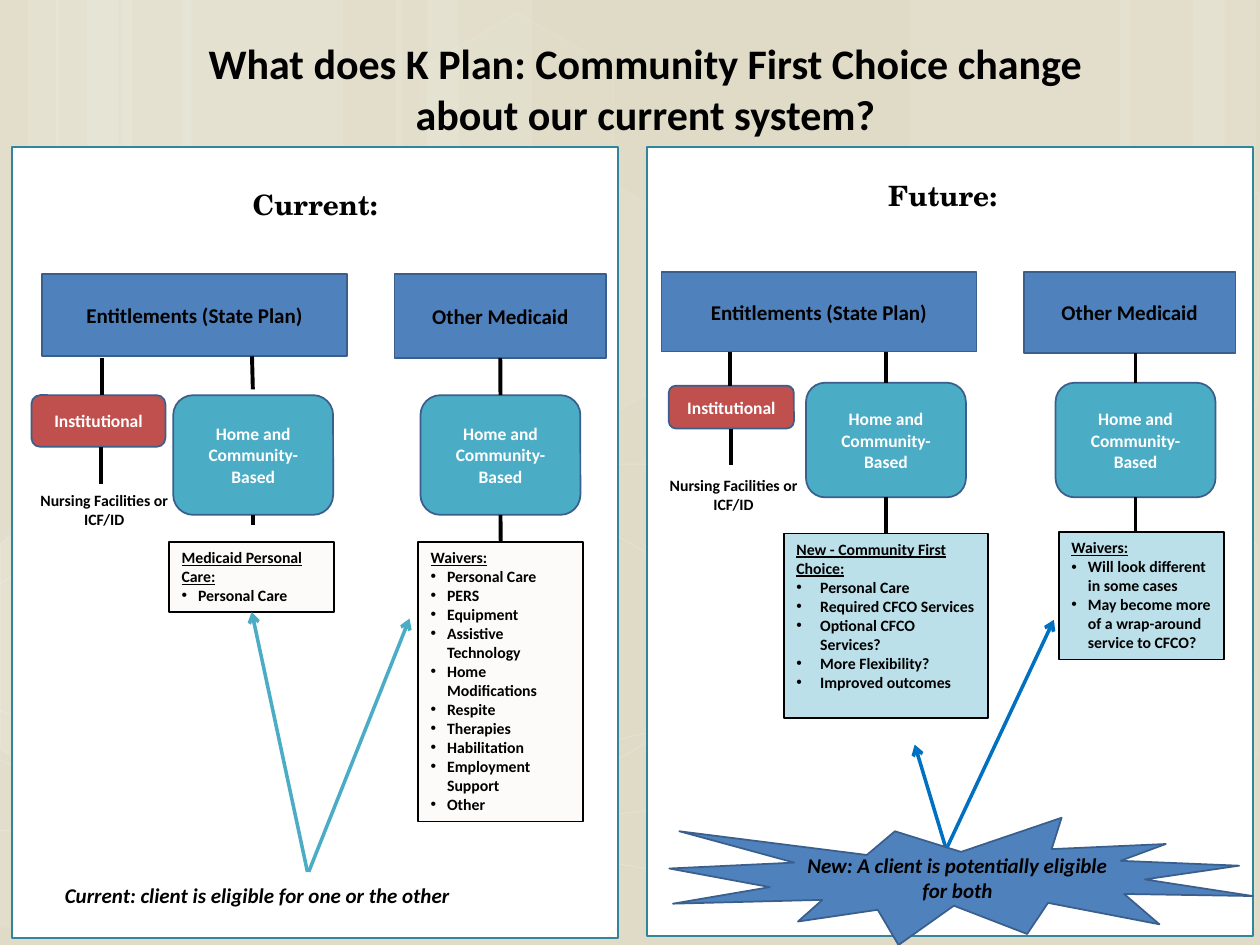
from dataclasses import dataclass
from typing import Optional

from lxml.etree import SubElement
from pptx import Presentation
from pptx.dml.color import RGBColor
from pptx.enum.shapes import MSO_CONNECTOR, MSO_SHAPE
from pptx.enum.text import MSO_ANCHOR, PP_ALIGN
from pptx.oxml.ns import qn
from pptx.util import Pt


@dataclass(frozen=True)
class Theme:
    font: str = "Calibri"
    serif: str = "TeX Gyre Schola"
    back: str = "DFDBC6"
    white: str = "FFFFFF"
    black: str = "000000"
    frame: str = "31859C"
    edge: str = "3A5F8C"
    blue: str = "4F81BD"
    red: str = "C0504D"
    teal: str = "4BACC6"
    cream: str = "FCFBF9"
    pale: str = "BCE0EA"
    arrow: str = "0070C0"
    title: int = 24
    heading: int = 16
    label: int = 12
    node: int = 10
    note: int = 9


T = Theme()


@dataclass(frozen=True)
class Style:
    fill: Optional[str] = None
    line: Optional[str] = None
    color: str = T.black
    size: int = T.label
    font: str = T.font
    shape: MSO_SHAPE = MSO_SHAPE.RECTANGLE
    anchor: MSO_ANCHOR = MSO_ANCHOR.MIDDLE
    align: PP_ALIGN = PP_ALIGN.CENTER
    italic: bool = False
    spacing: Optional[float] = None


@dataclass(frozen=True)
class Box:
    name: str
    x: float
    y: float
    w: float
    h: float
    style: Style
    lines: tuple = ()
    indent: float = 0


@dataclass(frozen=True)
class Link:
    start: tuple
    end: tuple
    color: str = T.black
    width: float = 2.25
    arrow: bool = False
    source: str = ""
    target: str = ""


PANEL = Style(T.white, T.frame)
PLAN = Style(T.blue, T.edge)
ROUND = MSO_SHAPE.ROUNDED_RECTANGLE
INST = Style(T.red, T.edge, T.white, T.node, shape=ROUND)
HOME = Style(T.teal, T.edge, T.white, T.node, shape=ROUND)
NOTE = Style(size=T.note, anchor=MSO_ANCHOR.TOP)
NOW = Style(T.cream, T.black, size=T.note, anchor=MSO_ANCHOR.TOP, align=PP_ALIGN.LEFT)
NEXT = Style(T.pale, T.black, size=T.note, anchor=MSO_ANCHOR.TOP, align=PP_ALIGN.LEFT)
REMARK = Style(italic=True, anchor=MSO_ANCHOR.TOP, align=PP_ALIGN.LEFT)
BURST = Style(T.blue, T.edge, shape=MSO_SHAPE.EXPLOSION1, italic=True)
TITLE = Style(size=T.title, anchor=MSO_ANCHOR.TOP)
HEAD_NOW = Style(size=T.heading, font=T.serif, anchor=MSO_ANCHOR.TOP, spacing=1.4)
HEAD_NEXT = Style(size=T.heading, font=T.serif, anchor=MSO_ANCHOR.TOP, spacing=1.2)

PLAN_TEXT = ("Entitlements (State Plan)",)
OTHER_TEXT = ("Other Medicaid",)
INST_TEXT = ("Institutional",)
HOME_TEXT = ("Home and Community-Based",)
NURSING_TEXT = ("Nursing Facilities or", "ICF/ID")

BOXES = [
    Box("future panel", 369.6, 84.2, 346.3, 450.5, PANEL),
    Box("current panel", 7, 84.2, 346.3, 452, PANEL),
    Box("plan", 24, 156.4, 174.4, 47.2, PLAN, PLAN_TEXT),
    Box("other", 225.4, 156.4, 121, 48.1, PLAN, OTHER_TEXT),
    Box("inst", 18, 225.8, 76.5, 29.5, INST, INST_TEXT),
    Box("home", 99, 225.8, 91.4, 68.4, HOME, HOME_TEXT),
    Box("other home", 240.3, 225.8, 91.4, 68.4, HOME, HOME_TEXT),
    Box("nursing", 12.4, 277, 94.3, 28.8, NOTE, NURSING_TEXT),
    Box("care", 96.7, 309.6, 94.3, 40.1, NOW,
        ("Medicaid Personal Care:", "Personal Care"), 9.4),
    Box("waivers", 239, 309.6, 94.3, 159.8, NOW,
        ("Waivers:", "Personal Care", "PERS", "Equipment", "Assistive Technology",
         "Home Modifications", "Respite", "Therapies", "Habilitation",
         "Employment Support", "Other"), 9.4),
    Box("remark", 30, 500.7, 282.2, 21.6, REMARK,
        ("Current: client is eligible for one or the other",)),
    Box("future plan", 378, 155.5, 180, 45.4, PLAN, PLAN_TEXT),
    Box("future other", 585, 155.5, 121, 46.1, PLAN, OTHER_TEXT),
    Box("future inst", 382.2, 220.4, 71.5, 24.5, INST, INST_TEXT),
    Box("future home", 460.6, 218.7, 91.4, 65.5, HOME, HOME_TEXT),
    Box("future other home", 603.2, 218.7, 91.4, 65.5, HOME, HOME_TEXT),
    Box("future nursing", 372, 268.2, 94.3, 28.8, NOTE, NURSING_TEXT),
    Box("choice", 448, 304.9, 116.6, 105.3, NEXT,
        ("New - Community First Choice:", "Personal Care", "Required CFCO Services",
         "Optional CFCO Services?", "More Flexibility?", "Improved outcomes"), 13.6),
    Box("future waivers", 605.2, 304, 94.3, 72.9, NEXT,
        ("Waivers:", "Will look different in some cases",
         "May become more of a wrap-around service to CFCO?"), 9.4),
    Box("current", 30, 95.8, 300.2, 28.8, HEAD_NOW, ("Current:",)),
    Box("future", 382.7, 94.7, 311.8, 48.2, HEAD_NEXT, ("Future:",)),
    Box("title", 48.2, 18, 646.6, 65.5, TITLE,
        ("What does K Plan: Community First Choice change ", "about our current system? ")),
]
STAR = Box("star", 382.5, 467.3, 333.4, 72.7, BURST,
           ("New: A client is potentially eligible for both",))

LINKS = [
    Link((58.3, 204.5), (58.3, 225.8)),
    Link((57.7, 255.3), (57.7, 276.5)),
    Link((144, 203.6), (144.5, 222.5)),
    Link((144.7, 294.2), (144.7, 300.2), source="home"),
    Link((286, 204.5), (286, 225.8), source="other", target="other home"),
    Link((286, 294.2), (286, 309.6), source="other home", target="waivers"),
    Link((175.7, 498.2), (143.9, 349.7), T.teal, 2, True, target="care"),
    Link((176.4, 498.2), (234, 353.5), T.teal, 2, True),
    Link((417.4, 200.9), (417.4, 220.4)),
    Link((417.6, 244.9), (417.6, 265.7)),
    Link((506.3, 200.9), (506.3, 218.7), target="future home"),
    Link((506.3, 284.2), (506.3, 304.9), source="future home", target="choice"),
    Link((648.9, 201.6), (648.9, 218.7), target="future other home"),
    Link((648.9, 284.2), (648.9, 304), source="future other home"),
    Link((540.7, 485.3), (522.7, 425.5), T.arrow, 2, True),
    Link((540.7, 485.3), (602.2, 354.2), T.arrow, 2, True),
]

STRIPS = [(69.8, 126), (0, 33.8), (15.8, 59.8), (103.7, 126), (31.7, 36), (49.7, 59.8),
          (519.8, 126), (681.8, 36), (640.1, 59.8), (226.1, 36), (244.1, 59.8)]
HEXAGONS = [(290.9, 315.4, 0, 12), (291.6, 115.9, 7, 8), (232.6, 15.8, 4, 8)]
CUT_HEXAGONS = [
    ([(0, 311), (5.8, 306), (61.2, 337.7), (60.5, 400.3), (6.5, 432), (0, 427.7)], 10),
    ([(658.8, 339.8), (712.8, 308.2), (718.6, 311), (718.6, 432), (713.5, 434.2), (658.8, 402.5)], 4),
    ([(658.8, 139.7), (712.8, 108), (719.3, 110.9), (718.6, 231.1), (713.5, 234), (658.8, 202.3)], 0),
]
CURVES = [
    [(0, 474.5), (36, 476.6), (74.9, 479.5), (128.9, 478.1), (182.9, 477.4), (249.8, 475.9),
     (321.8, 468.7), (393.8, 461.5), (496.1, 447.8), (562.3, 434.2), (627.8, 420.5),
     (695.5, 398.9), (717.1, 386.6)],
    [(0, 333.4), (18, 322.6), (38.9, 311), (79.2, 301), (120.2, 290.2), (178.6, 274.3),
     (241.9, 268.6), (306, 263.5), (383.8, 263.5), (463, 268.6), (542.2, 274.3),
     (673.9, 296.6), (717.1, 302.4)],
    [(0, 434.2), (82.8, 473.8), (169.9, 513.4), (232.6, 529.9)],
    [(0, 406.1), (19.4, 414), (42.5, 421.9), (84.2, 433.4), (126, 445), (188.6, 462.2),
     (248.4, 474.5), (308.9, 486.7), (384.5, 499.7), (444.2, 507.6), (504, 514.8),
     (568.1, 518.4), (606.2, 520.6), (643.7, 522.7), (690, 521.3), (717.1, 518.4)],
    [(166.3, 529.9), (179.3, 515.5), (192.2, 501.1), (209.5, 487.4), (226.8, 474.5),
     (251.3, 460.1), (271.4, 450), (291.6, 440.6), (303.8, 436.3), (329.8, 428.4),
     (356.4, 421.2), (404.6, 411.1), (429.8, 406.1), (455, 401.8), (459.4, 401.8),
     (481.7, 399.6), (504, 398.2), (539.3, 396), (563.8, 395.3), (610, 394.6),
     (690, 395.3), (716.4, 398.2)],
]


def paint(sp, fill: Optional[str], line: Optional[str], width: float = 1) -> None:
    sp.shadow.inherit = False
    for part, color in ((sp.fill, fill), (sp.line.fill, line)):
        if color:
            part.solid()
            part.fore_color.rgb = RGBColor.from_string(color)
        else:
            part.background()
    if line:
        sp.line.width = Pt(width)


def glaze(sp, fill: int, line: int, width: float = 1) -> None:
    paint(sp, T.white if fill else None, T.white if line else None, width)
    props = sp._element.spPr
    for parent, alpha in ((props, fill), (props.find(qn("a:ln")), line)):
        if alpha:
            clr = parent.find(qn("a:solidFill"))[0]
            SubElement(clr, qn("a:alpha"), val=str(alpha * 1000))


def draw_outline(s, points: list, close: bool):
    pts = [(Pt(x), Pt(y)) for x, y in points]
    builder = s.shapes.build_freeform(*pts[0])
    builder.add_line_segments(pts[1:], close=close)
    return builder.convert_to_shape()


def sample(curve: list, steps: int = 3) -> list:
    points = [curve[0]]
    for i in range(0, len(curve) - 1, 3):
        for k in range(1, steps + 1):
            t = k / steps
            weights = ((1 - t) ** 3, 3 * t * (1 - t) ** 2, 3 * t * t * (1 - t), t ** 3)
            points.append(tuple(sum(w * c[axis] for w, c in zip(weights, curve[i:i + 4]))
                                for axis in (0, 1)))
    return points


def draw_backdrop(s) -> None:
    s.background.fill.solid()
    s.background.fill.fore_color.rgb = RGBColor.from_string(T.back)
    for x, w in STRIPS:
        glaze(s.shapes.add_shape(MSO_SHAPE.RECTANGLE, Pt(x), Pt(0), Pt(w), Pt(530)), 10, 0)
    for curve in CURVES:
        glaze(draw_outline(s, sample(curve), False), 0, 20, 0.5)
    for x, y, fill, line in HEXAGONS:
        sp = s.shapes.add_shape(MSO_SHAPE.HEXAGON, Pt(x), Pt(y), Pt(126), Pt(109.4))
        sp.adjustments[0] = 0.285
        sp.rotation = 30
        glaze(sp, fill, line)
    for points, fill in CUT_HEXAGONS:
        glaze(draw_outline(s, points, True), fill, 12)


def draw_box(s, box: Box):
    st = box.style
    frame = Pt(box.x), Pt(box.y), Pt(box.w), Pt(box.h)
    if st.fill:
        sp = s.shapes.add_shape(st.shape, *frame)
        paint(sp, st.fill, st.line)
    else:
        sp = s.shapes.add_textbox(*frame)
    tf = sp.text_frame
    tf.word_wrap = True
    tf.vertical_anchor = st.anchor
    for i, line in enumerate(box.lines):
        p = tf.add_paragraph() if i else tf.paragraphs[0]
        p.alignment = st.align
        if st.spacing:
            p.line_spacing = st.spacing
            p.space_before = Pt(6)
        r = p.add_run()
        r.text = line
        r.font.name, r.font.size = st.font, Pt(st.size)
        r.font.bold, r.font.italic = True, st.italic
        r.font.color.rgb = RGBColor.from_string(st.color)
        if box.indent and i:
            pr = p._p.get_or_add_pPr()
            pr.set("marL", str(Pt(box.indent)))
            pr.set("indent", str(-Pt(box.indent)))
            SubElement(pr, qn("a:buFont"), typeface="Arial")
            SubElement(pr, qn("a:buChar"), char="•")
        elif box.indent:
            r.font.underline = True
    return sp


def draw_link(s, link: Link, shapes: dict) -> None:
    ends = [Pt(v) for v in link.start + link.end]
    cx = s.shapes.add_connector(MSO_CONNECTOR.STRAIGHT, *ends)
    cx.line.color.rgb = RGBColor.from_string(link.color)
    cx.line.width = Pt(link.width)
    if link.source:
        cx.begin_connect(shapes[link.source], 2)
    if link.target:
        cx.end_connect(shapes[link.target], 2 if link.arrow else 0)
    if link.arrow:
        SubElement(cx.line._get_or_add_ln(), qn("a:tailEnd"), type="arrow")
    SubElement(cx._element.spPr, qn("a:effectLst"))


def main() -> None:
    prs = Presentation()
    prs.slide_width, prs.slide_height = Pt(720), Pt(540)
    s = prs.slides.add_slide(prs.slide_layouts[6])
    draw_backdrop(s)
    shapes = {box.name: draw_box(s, box) for box in BOXES}
    for link in LINKS:
        draw_link(s, link, shapes)
    draw_box(s, STAR)
    prs.save("out.pptx")


if __name__ == "__main__":
    main()
